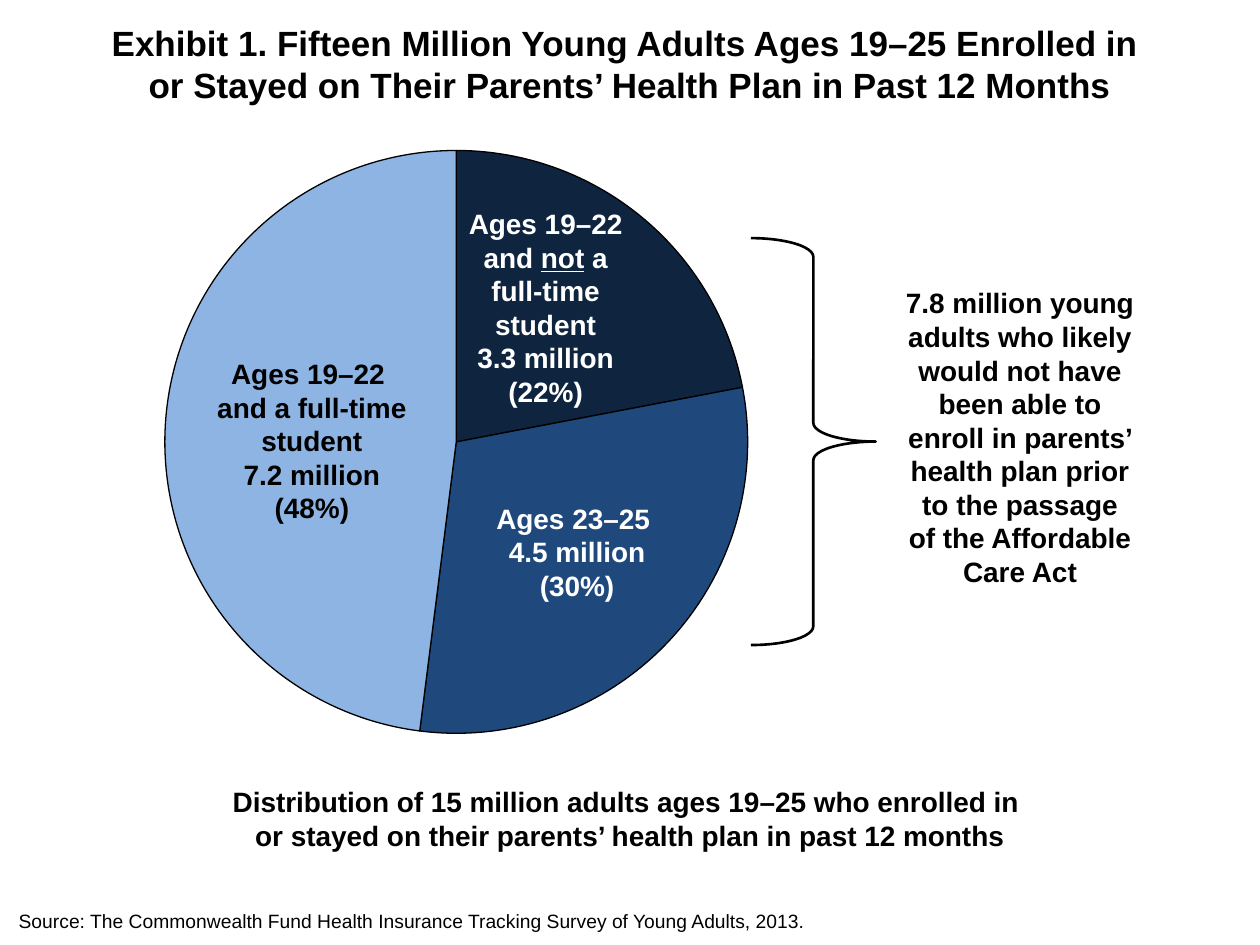
from lxml import etree
from pptx import Presentation
from pptx import util as u
from pptx.chart.data import CategoryChartData
from pptx.dml.color import RGBColor
from pptx.enum import chart as charts, shapes, text
from pptx.oxml import parse_xml
from pptx.oxml.ns import nsdecls

THEME = {
    "font": "Arial", "chart_font": "Calibri",
    "black": "000000", "white": "FFFFFF",
    "slices": ["0F243E", "1F497D", "8EB4E3"],
    "title": 20, "body": 16, "source": 11, "chart": 18,
}

TITLE = ["Exhibit 1. Fifteen Million Young Adults Ages 19–25 Enrolled in \v"
         "or Stayed on Their Parents’ Health Plan in Past 12 Months"]
TITLE_BOX = (0, 0.1, 10, 0.8)

SHARES = [("1", 22), ("2", 30), ("3", 48)]
CHART_BOX = (0.73, 1.04, 5.67, 5.14)
PIE_LAYOUT = {"x": 0.06, "y": 0.03, "w": 0.9, "h": 0.9}
BRACE_BOX = (5.96, 1.89, 0.99, 3.23)

LABELS = [
    ((0, 6.18, 10, 0.65), "black",
     ["Distribution of 15 million adults ages 19–25 who enrolled in \v"
      "or stayed on their parents’ health plan in past 12 months"]),
    ((3.54, 1.59, 1.58, 1.72), "white",
     ["Ages 19–22 and _not_ a full-time student", "3.3 million\v(22%)"]),
    ((3.6, 3.93, 1.96, 0.91), "white",
     ["Ages 23–25 ", "4.5 million\v(30%)"]),
    ((1.47, 2.78, 2.01, 1.45), "black",
     ["Ages 19–22 \vand a full-time student", "7.2 million\v(48%)"]),
    ((7.09, 2.22, 2.01, 2.6), "black",
     ["7.8 million young adults who likely would not have been able to enroll "
      "in parents’ health plan prior to the passage of the Affordable Care Act"]),
]
SOURCE = ["Source: The Commonwealth Fund Health Insurance Tracking Survey "
          "of Young Adults, 2013."]
SOURCE_BOX = (0.05, 7.17, 9.9, 0.29)


def inches(box):
    return [u.Inches(length) for length in box]


def color(name):
    return RGBColor.from_string(THEME[name])


def write(frame, paragraphs, size, color_name="black", bold=True,
          align=text.PP_ALIGN.CENTER):
    frame.word_wrap = True
    for index, content in enumerate(paragraphs):
        paragraph = frame.add_paragraph() if index else frame.paragraphs[0]
        plain, *others = content.split("_")
        paragraph.text = plain
        for position, piece in enumerate(others):
            run = paragraph.add_run()
            run.text = piece
            run.font.underline = position % 2 == 0
        paragraph.alignment = align
        for run in paragraph.runs:
            run.font.name = THEME["font"]
            run.font.size = u.Pt(THEME[size])
            run.font.bold = bold
            run.font.color.rgb = color(color_name)


def add_label(slide, box, paragraphs, size, **style):
    write(slide.shapes.add_textbox(*inches(box)).text_frame,
          paragraphs, size, **style)


def add_pie(slide):
    data = CategoryChartData()
    data.categories = [category for category, _ in SHARES]
    data.add_series("Series 1", [share for _, share in SHARES])
    chart = slide.shapes.add_chart(
        charts.XL_CHART_TYPE.PIE, *inches(CHART_BOX), data).chart
    chart.has_title = False
    chart.has_legend = False
    chart.font.name = THEME["chart_font"]
    chart.font.size = u.Pt(THEME["chart"])
    chart.font.color.rgb = color("black")
    plot = chart.plots[0]
    plot.vary_by_categories = False
    for index, fill_color in enumerate(THEME["slices"]):
        style = plot.series[0].points[index].format
        style.fill.solid()
        style.fill.fore_color.rgb = RGBColor.from_string(fill_color)
        style.line.color.rgb = color("black")
        style.line.width = u.Pt(0.75)

    layout = parse_xml(
        f'<c:layout {nsdecls("c")}><c:manualLayout><c:layoutTarget val="inner"/>'
        '<c:xMode val="edge"/><c:yMode val="edge"/></c:manualLayout></c:layout>')
    namespace = etree.QName(layout).namespace
    for key, value in PIE_LAYOUT.items():
        etree.SubElement(layout[0], f"{{{namespace}}}{key}", val=str(value))
    plot_area = chart.element.chart.plotArea
    for old_layout in plot_area.findall(f"{{{namespace}}}layout"):
        plot_area.remove(old_layout)
    plot_area.insert(0, layout)


def add_brace(slide):
    brace = slide.shapes.add_shape(
        shapes.MSO_SHAPE.RIGHT_BRACE, *inches(BRACE_BOX))
    brace.adjustments[0] = 0.15
    brace.shadow.inherit = False
    brace.fill.background()
    brace.line.color.rgb = color("black")
    brace.line.width = u.Pt(1.5)


def main():
    presentation = Presentation()
    presentation.slide_width, presentation.slide_height = inches((10, 7.5))
    slide = presentation.slides.add_slide(presentation.slide_layouts[5])

    add_pie(slide)
    title = slide.shapes.title
    title.left, title.top, title.width, title.height = inches(TITLE_BOX)
    title.text_frame.vertical_anchor = text.MSO_ANCHOR.MIDDLE
    write(title.text_frame, TITLE, "title")
    for box, color_name, paragraphs in LABELS:
        add_label(slide, box, paragraphs, "body", color_name=color_name)
    add_label(slide, SOURCE_BOX, SOURCE, "source", bold=False,
              align=text.PP_ALIGN.LEFT)
    add_brace(slide)
    presentation.save("out.pptx")


if __name__ == "__main__":
    main()
